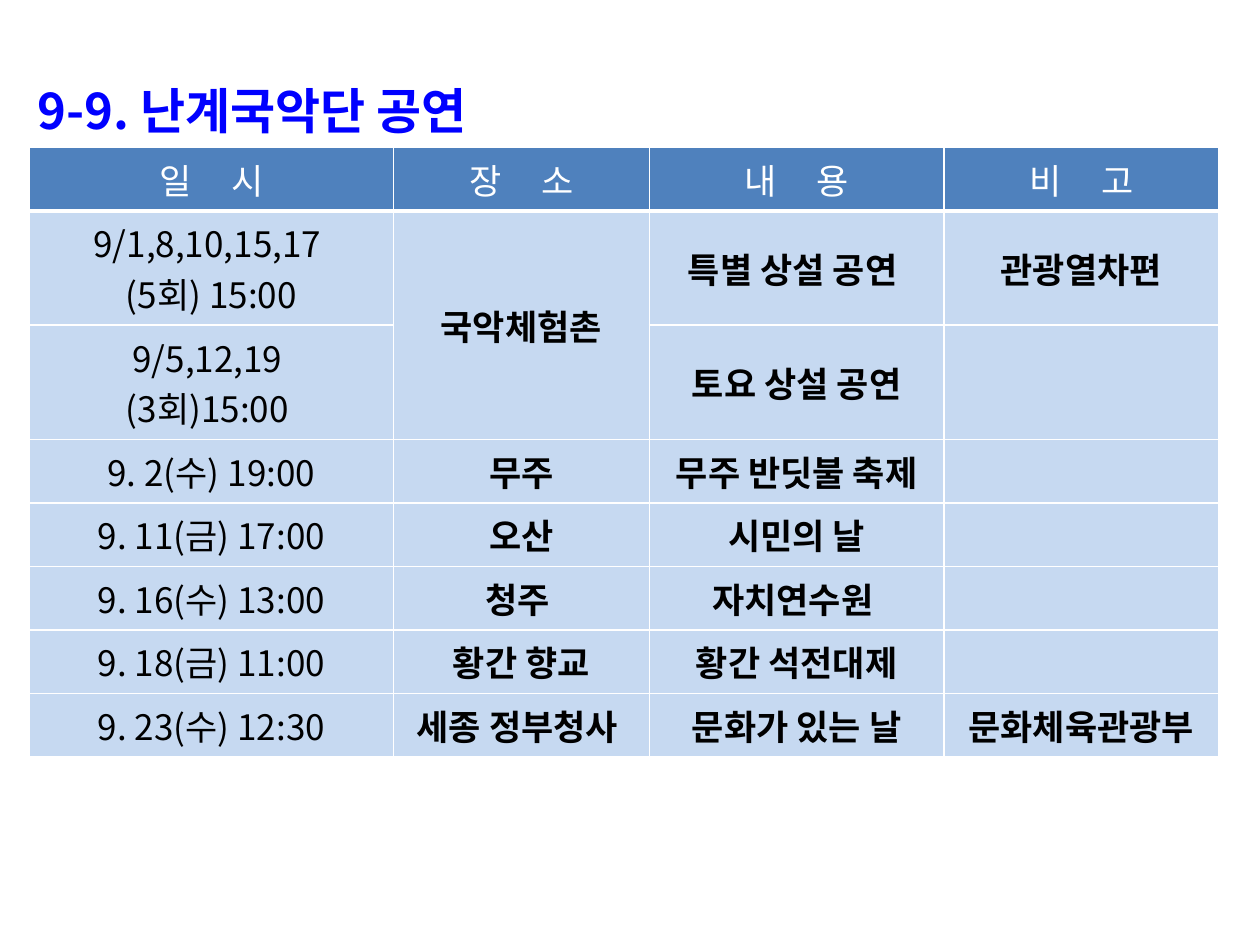
import lxml.etree
import pptx
import pptx.dml.color
import pptx.enum.text
import pptx.oxml.ns
import pptx.util

Cm = pptx.util.Cm
Pt = pptx.util.Pt
qn = pptx.oxml.ns.qn
Align = pptx.enum.text.PP_ALIGN
Anchor = pptx.enum.text.MSO_ANCHOR

TITLE = "9-9. 난계국악단 공연"
HEADS = ["일 시", "장 소", "내 용", "비 고"]
SHOWS = [
    ["9/1,8,10,15,17 \n(5회) 15:00", "국악체험촌", "특별 상설 공연 ", "관광열차편"],
    ["9/5,12,19 \n(3회)15:00 ", "", "토요 상설 공연", ""],
    ["9. 2(수) 19:00", "무주", "무주 반딧불 축제", ""],
    ["9. 11(금) 17:00", "오산", "시민의 날", ""],
    ["9. 16(수) 13:00", "청주 ", "자치연수원 ", ""],
    ["9. 18(금) 11:00", "황간 향교", "황간 석전대제", ""],
    ["9. 23(수) 12:30", "세종 정부청사 ", "문화가 있는 날", "문화체육관광부"],
]
WIDTHS = [7.34, 5.16, 5.94, 5.54]
LOW, TALL = 1.28, 2.3


def color(code):
    return pptx.dml.color.RGBColor.from_string(code)


class Deck:
    face = "Noto Sans CJK KR"
    blue, black, white = "0000FF", "000000", "FFFFFF"
    dark, pale = "4F81BD", "C6D9F1"

    def __init__(self):
        self.file = pptx.Presentation()
        self.file.slide_width = Cm(25.4)
        self.file.slide_height = Cm(19.05)
        self.slide = self.file.slides.add_slide(self.file.slide_layouts[5])

    def run(self, para, text, size, code, bold=False, gap=0):
        run = para.add_run()
        run.text = text
        font = run.font
        font.name = self.face
        font.size = Pt(size)
        font.bold = bold
        font.color.rgb = color(code)
        props = run._r.get_or_add_rPr()
        east = lxml.etree.Element(qn("a:ea"), typeface=self.face)
        props.find(qn("a:latin")).addnext(east)
        if gap:
            props.set("spc", str(gap))

    def title(self, text, left, top, width, height):
        shape = self.slide.shapes.title
        shape.left, shape.top = Cm(left), Cm(top)
        shape.width, shape.height = Cm(width), Cm(height)
        frame = shape.text_frame
        frame.auto_size = pptx.enum.text.MSO_AUTO_SIZE.NONE
        frame.vertical_anchor = Anchor.TOP
        para = frame.paragraphs[0]
        para.alignment = Align.LEFT
        para.line_spacing = 1.5
        self.run(para, text, 28, self.blue, True)

    def edge(self, cell, side, width):
        line = lxml.etree.SubElement(
            cell._tc.get_or_add_tcPr(), qn("a:ln" + side), w=str(Pt(width)))
        fill = lxml.etree.SubElement(line, qn("a:solidFill"))
        lxml.etree.SubElement(fill, qn("a:srgbClr"), val=self.white)

    def cell(self, cell, text, row, col):
        head = row == 0
        cell.vertical_anchor = Anchor.MIDDLE
        for side in "LRTB":
            thick = (side, row) in (("B", 0), ("T", 1))
            self.edge(cell, side, 3 if thick else 1)
        cell.fill.solid()
        cell.fill.fore_color.rgb = color(self.dark if head else self.pale)
        if not text:
            return
        frame = cell.text_frame
        for num, line in enumerate(text.split("\n")):
            para = frame.add_paragraph() if num else frame.paragraphs[0]
            para.alignment = Align.CENTER
            if head:
                for part in line:
                    gap = 1800 if part == " " else 0
                    self.run(para, part, 20, self.white, gap=gap)
            else:
                self.run(para, line, 20, self.black, col > 0)

    def table(self, rows, left, top, widths, heights):
        table = self.slide.shapes.add_table(
            len(rows), len(widths), Cm(left), Cm(top),
            Cm(sum(widths)), Cm(sum(heights))).table
        for col, width in zip(table.columns, widths):
            col.width = Cm(width)
        for row, height in zip(table.rows, heights):
            row.height = Cm(height)
        for row, texts in enumerate(rows):
            for col, text in enumerate(texts):
                self.cell(table.cell(row, col), text, row, col)
        return table


def main():
    deck = Deck()
    deck.title(TITLE, 0.5, 0.91, 24.4, 2.2)
    rows = [HEADS] + SHOWS
    tall = [TALL if "\n" in row[0] else LOW for row in rows]
    table = deck.table(rows, 0.59, 2.97, WIDTHS, tall)
    table.cell(1, 1).merge(table.cell(2, 1))
    deck.file.save("out.pptx")


if __name__ == "__main__":
    main()
